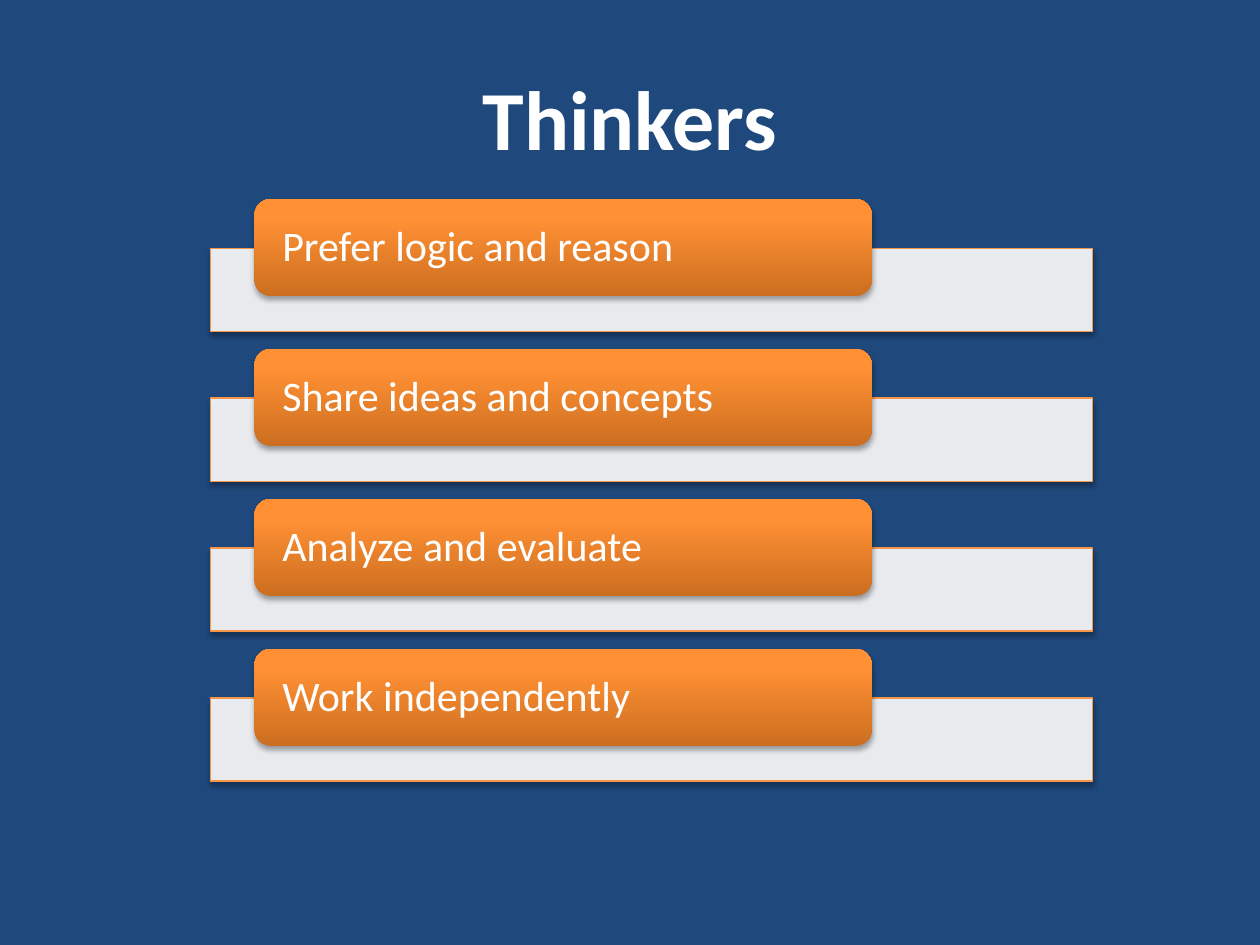
from lxml import etree
from pptx import Presentation
from pptx.dml.color import RGBColor
from pptx.enum.shapes import MSO_SHAPE
from pptx.enum.text import MSO_ANCHOR, PP_ALIGN
from pptx.oxml import parse_xml
from pptx.oxml.ns import qn
from pptx.util import Inches, Pt

COLORS = {
    "background": "1F497D",
    "white": "FFFFFF",
    "outline": "F79646",
    "shadow": "000000",
}
PILL_GRADIENT = [(0, "CC6E20"), (80, "FF9034"), (100, "FF9136")]
DRAWING_NS = "http://schemas.openxmlformats.org/drawingml/2006/main"


def add_text(text, left, top, width, height, size, bold=False,
             align=PP_ALIGN.LEFT, inset=0.1, line_spacing=1.0):
    frame = slide.shapes.add_textbox(
        Inches(left), Inches(top), Inches(width), Inches(height)).text_frame
    frame.word_wrap = True
    frame.vertical_anchor = MSO_ANCHOR.MIDDLE
    frame.margin_left = frame.margin_right = Inches(inset)
    frame.margin_top = frame.margin_bottom = 0
    paragraph = frame.paragraphs[0]
    paragraph.alignment = align
    paragraph.line_spacing = line_spacing
    run = paragraph.add_run()
    run.text = text
    run.font.name = "Calibri"
    run.font.size = Pt(size)
    run.font.bold = bold
    run.font.color.rgb = RGBColor.from_string(COLORS["white"])


def add_shadowed(preset, left, top, width, height):
    shape = slide.shapes.add_shape(
        preset, Inches(left), Inches(top), Inches(width), Inches(height))
    shape.shadow.inherit = False
    effects = shape.element.spPr.find(qn("a:effectLst"))
    effects.append(parse_xml(
        f'<a:outerShdw xmlns:a="{DRAWING_NS}" blurRad="{Pt(3.1)}" '
        f'dist="{Pt(1.8)}" dir="5400000" rotWithShape="0">'
        f'<a:srgbClr val="{COLORS["shadow"]}"><a:alpha val="35000"/>'
        '</a:srgbClr></a:outerShdw>'))
    return shape


prs = Presentation()
prs.slide_width, prs.slide_height = Inches(10), Inches(7.5)
slide = prs.slides.add_slide(prs.slide_layouts[6])
slide.background.fill.solid()
slide.background.fill.fore_color.rgb = RGBColor.from_string(COLORS["background"])

# Traits: a pale bar with an orange pill over its upper edge
traits = [
    "Prefer logic and reason",
    "Share ideas and concepts",
    "Analyze and evaluate",
    "Work independently",
]
first_top, row_pitch = 1.58, 1.19

for row, trait in enumerate(traits):
    top = first_top + row * row_pitch

    # Pale bar, 90 % opaque
    bar = add_shadowed(MSO_SHAPE.RECTANGLE, 1.67, top + 0.39, 7, 0.66)
    bar.fill.solid()
    bar.fill.fore_color.rgb = RGBColor.from_string(COLORS["white"])
    bar_color = bar.element.spPr.find(qn("a:solidFill")).find(qn("a:srgbClr"))
    etree.SubElement(bar_color, qn("a:alpha"), val="90000")
    bar.line.color.rgb = RGBColor.from_string(COLORS["outline"])
    bar.line.width = Pt(0.75)

    # Orange pill, darkest at the bottom
    pill = add_shadowed(MSO_SHAPE.ROUNDED_RECTANGLE, 2.02, top, 4.9, 0.77)
    pill.line.fill.background()
    pill.fill.gradient()
    pill.fill.gradient_angle = 90
    stops = pill.element.spPr.find(qn("a:gradFill")).find(qn("a:gsLst"))
    for stop in list(stops):
        stops.remove(stop)
    for position, color in PILL_GRADIENT:
        stop = etree.SubElement(stops, qn("a:gs"), pos=str(position * 1000))
        etree.SubElement(stop, qn("a:srgbClr"), val=color)

    # Trait wording
    add_text(trait, 2.05, top + 0.04, 4.82, 0.7, size=24, inset=0.19,
             line_spacing=0.9)

# Title
add_text("Thinkers", 0.5, 0.3, 9, 1.25, size=48, bold=True,
         align=PP_ALIGN.CENTER)

prs.save("out.pptx")
